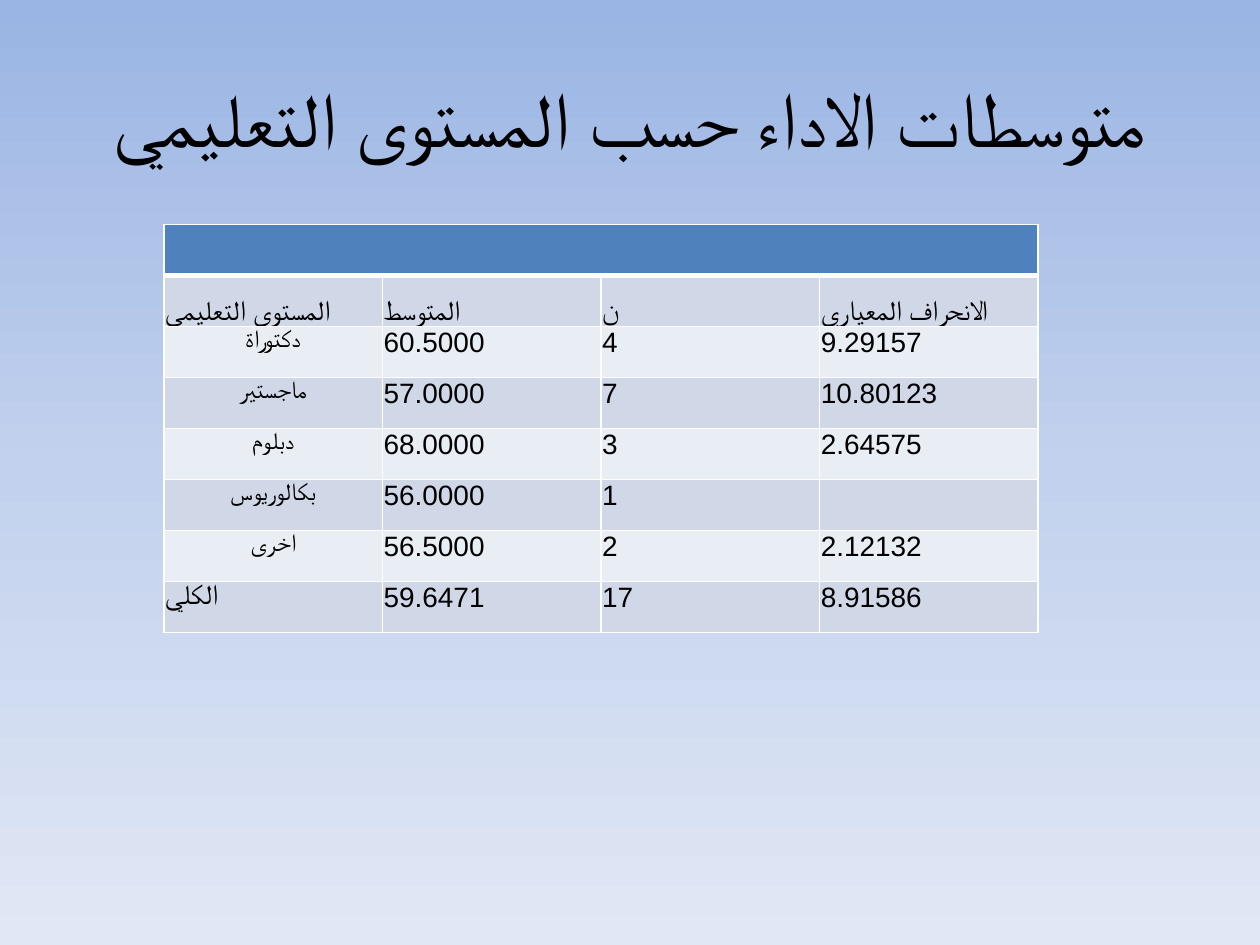
from copy import deepcopy
from dataclasses import dataclass

from pptx import Presentation
from pptx.dml.color import RGBColor
from pptx.enum.text import MSO_ANCHOR, PP_ALIGN
from pptx.oxml import parse_xml
from pptx.oxml.ns import nsdecls, qn
from pptx.util import Pt


@dataclass(frozen=True)
class Theme:
    """Colours, fonts and type sizes of the slide."""

    background: tuple = ((0, "9AB5E4"), (0.5, "C2D1ED"), (1, "E1E8F5"))
    text: str = "000000"
    banner: str = "4F81BD"
    bands: tuple = ("E9EDF4", "D0D8E8")
    border: str = "FFFFFF"
    title_font: str = "Calibri"
    table_font: str = "Arial"
    title_size: int = 44
    table_size: int = 16
    level_size: int = 14


THEME = Theme()
TITLE = "متوسطات الاداء حسب المستوى التعليمي"
HEADERS = ("المستوى التعليمي", "المتوسط", "ن", "الانحراف المعياري")
LEVELS = (
    ("دكتوراة", "60.5000", "4", "9.29157"),
    ("ماجستير", "57.0000", "7", "10.80123"),
    ("دبلوم", "68.0000", "3", "2.64575"),
    ("بكالوريوس", "56.0000", "1", ""),
    ("اخرى", "56.5000", "2", "2.12132"),
)
TOTAL = ("الكلي", "59.6471", "17", "8.91586")


def paint_background(slide):
    """Fill the slide with a gradient running from top to bottom."""
    fill = slide.background.fill
    fill.gradient()
    stop_list = slide.element.find(".//" + qn("a:gsLst"))
    stop_list.append(deepcopy(stop_list[-1]))
    for stop, (position, color) in zip(fill.gradient_stops, THEME.background):
        stop.position = position
        stop.color.rgb = RGBColor.from_string(color)
    fill.gradient_angle = 270


def style_paragraph(paragraph, font_name, size, alignment):
    """Set the font and alignment of a paragraph."""
    paragraph.alignment = alignment
    paragraph.font.name = font_name
    paragraph.font.size = Pt(size)
    paragraph.font.bold = False
    paragraph.font.color.rgb = RGBColor.from_string(THEME.text)


def set_title(slide):
    """Write the right-to-left title in its placeholder."""
    title = slide.shapes.title
    title.left, title.top, title.width, title.height = Pt(36), Pt(21.6), Pt(648), Pt(90)
    title.text_frame.text = TITLE
    title.text_frame.vertical_anchor = MSO_ANCHOR.MIDDLE
    paragraph = title.text_frame.paragraphs[0]
    style_paragraph(paragraph, THEME.title_font, THEME.title_size, PP_ALIGN.CENTER)
    paragraph._p.get_or_add_pPr().set("rtl", "1")


def set_borders(cell, bottom_width):
    """Draw the cell borders, with a chosen width for the bottom one."""
    properties = cell._tc.get_or_add_tcPr()
    widths = {"lnL": 1, "lnR": 1, "lnT": 1, "lnB": bottom_width}
    for index, (side, width) in enumerate(widths.items()):
        properties.insert(index, parse_xml(
            f'<a:{side} {nsdecls("a")} w="{Pt(width)}"><a:solidFill>'
            f'<a:srgbClr val="{THEME.border}"/></a:solidFill></a:{side}>'))


def fill_cell(cell, text, color, size=THEME.table_size, alignment=PP_ALIGN.LEFT,
              anchor=MSO_ANCHOR.TOP, bottom_width=1):
    """Write and format one table cell."""
    cell.text = text
    cell.vertical_anchor = anchor
    cell.margin_left = cell.margin_right = cell.margin_top = Pt(0.75)
    cell.margin_bottom = Pt(0)
    cell.fill.solid()
    cell.fill.fore_color.rgb = RGBColor.from_string(color)
    style_paragraph(cell.text_frame.paragraphs[0], THEME.table_font, size, alignment)
    set_borders(cell, bottom_width)


def add_scores_table(slide):
    """Add the table of means, counts and deviations by level."""
    rows = (HEADERS, *LEVELS, TOTAL)
    table = slide.shapes.add_table(
        len(rows) + 1, len(HEADERS), Pt(93.6), Pt(128.2), Pt(499.68), Pt(233.28)).table
    for cell in table.rows[0].cells:
        fill_cell(cell, "", THEME.banner, bottom_width=3)
    table.cell(0, 0).merge(table.cell(0, len(HEADERS) - 1))
    for row_index, values in enumerate(rows, start=1):
        anchor = MSO_ANCHOR.BOTTOM if values is HEADERS else MSO_ANCHOR.TOP
        for column_index, text in enumerate(values):
            is_level = column_index == 0 and values in LEVELS
            fill_cell(
                table.cell(row_index, column_index), text, THEME.bands[row_index % 2],
                size=THEME.level_size if is_level else THEME.table_size,
                alignment=PP_ALIGN.CENTER if is_level else PP_ALIGN.LEFT,
                anchor=anchor)


def main():
    """Build and save the presentation."""
    presentation = Presentation()
    presentation.slide_width, presentation.slide_height = Pt(720), Pt(540)
    slide = presentation.slides.add_slide(presentation.slide_layouts[5])
    paint_background(slide)
    set_title(slide)
    add_scores_table(slide)
    presentation.save("out.pptx")


if __name__ == "__main__":
    main()
